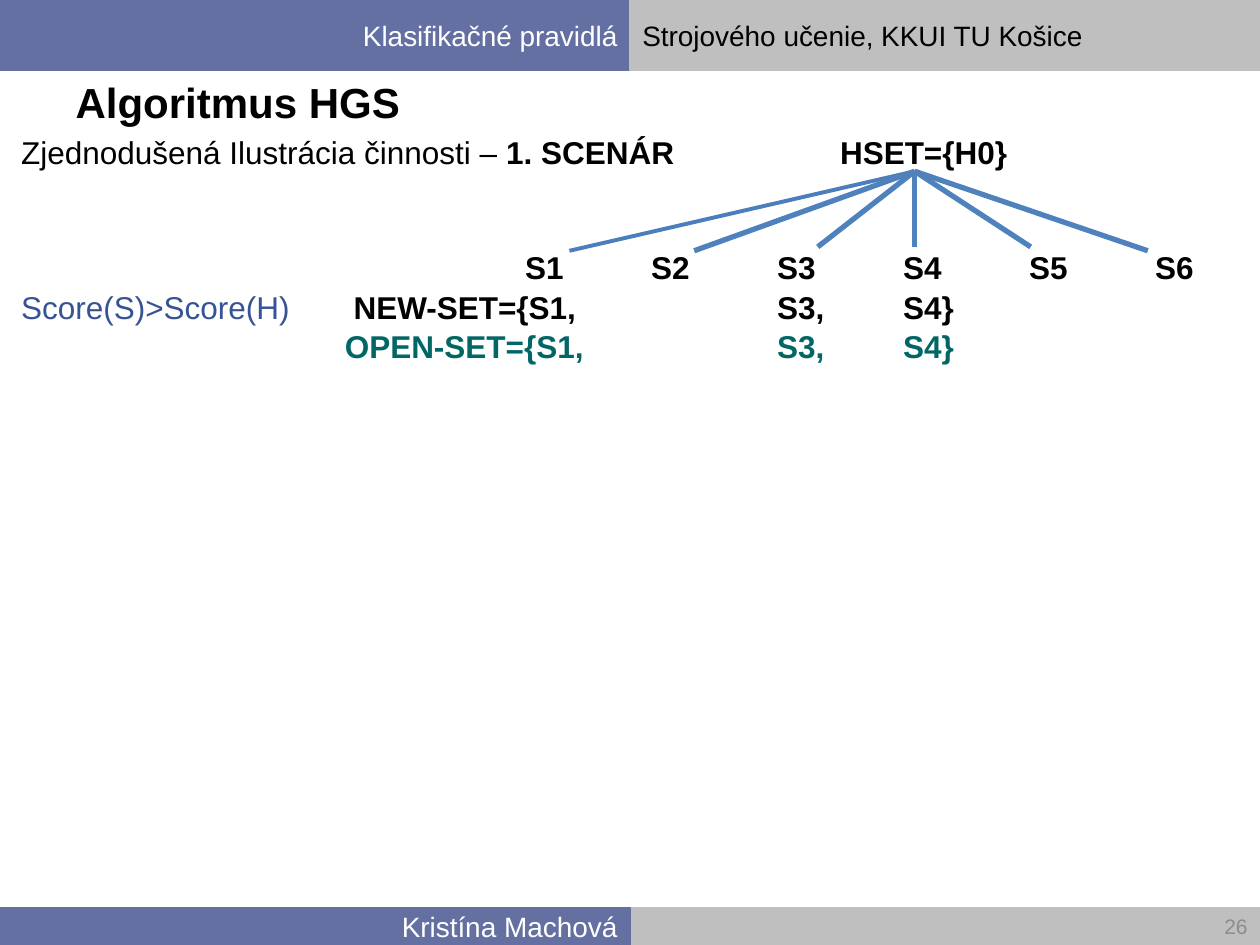
"""Build the slide on the first scenario of the HGS algorithm."""
import pptx
import pptx.dml.color
import pptx.enum.shapes
import pptx.enum.text
import pptx.oxml.ns
import pptx.util
from lxml import etree

Pt = pptx.util.Pt
RGB = pptx.dml.color.RGBColor
ALIGN = pptx.enum.text.PP_ALIGN
ANCHOR = pptx.enum.text.MSO_ANCHOR

BLACK = RGB(0, 0, 0)
WHITE = RGB(255, 255, 255)
GREY = RGB(0xBF, 0xBF, 0xBF)
DIM = RGB(0x8C, 0x8C, 0x8C)
SLATE = RGB(0x65, 0x70, 0xA2)
NAVY = RGB(0x36, 0x53, 0x94)
TEAL = RGB(0, 0x66, 0x66)
BLUE = RGB(0x4F, 0x81, 0xBD)
STEEL = RGB(0x4B, 0x7E, 0xBC)

WIDTH, HEIGHT = 720, 540
HALF, TOP, FOOT = WIDTH / 2, 40.32, 21.6
STEP = 72
COLS = [288 + STEP * i for i in range(6)]

BANDS = [
    (HALF, HEIGHT - FOOT, FOOT, GREY, "", BLACK, ALIGN.LEFT),
    (0, 0, TOP, SLATE, "Klasifikačné pravidlá", WHITE, ALIGN.RIGHT),
    (HALF, 0, TOP, GREY, "Strojového učenie, KKUI TU Košice", BLACK, ALIGN.LEFT),
    (0, HEIGHT - FOOT, FOOT, SLATE, "Kristína Machová", WHITE, ALIGN.RIGHT),
]

ROWS = [
    (0, [468], [("Zjednodušená Ilustrácia činnosti – ", BLACK, False),
                ("1. SCENÁR\tHSET={H0}", BLACK, True)]),
    (44, COLS, [("\tS1\tS2\tS3\tS4\tS5\tS6", BLACK, True)]),
    (0.9, [190, *COLS[2:4]], [("Score(S)>Score(H)", NAVY, False),
                              ("\tNEW-SET={S1,\tS3,\tS4}", BLACK, True)]),
    (0.9, [185, *COLS[2:4]], [("\tOPEN-SET={S1,\tS3,\tS4}", TEAL, True)]),
]

ROOT = (522.7, 97.9)
ENDS = [
    (325.4, 143.3, STEEL, 2.25),
    (396.7, 143.3, BLUE, 3),
    (467.3, 141.1, BLUE, 3),
    (522.7, 141.1, BLUE, 3),
    (589, 141.1, BLUE, 3),
    (655.9, 143.3, BLUE, 3),
]


def write(para, text, size=18, color=BLACK, bold=False, align=ALIGN.LEFT):
    para.alignment = align
    run = para.add_run()
    run.text = text
    font = run.font
    font.name, font.size, font.bold = "Arial", Pt(size), bold
    font.color.rgb = color


def place(shape, *box):
    shape.left, shape.top, shape.width, shape.height = map(Pt, box)


def set_tabs(para, stops):
    qn = pptx.oxml.ns.qn
    tabs = etree.SubElement(para._p.get_or_add_pPr(), qn("a:tabLst"))
    for stop in stops:
        etree.SubElement(tabs, qn("a:tab"), pos=str(int(Pt(stop))), algn="l")


def add_band(slide, left, top, high, fill, text, color, align):
    band = slide.shapes.add_shape(pptx.enum.shapes.MSO_SHAPE.RECTANGLE,
                                  Pt(left), Pt(top), Pt(HALF), Pt(high))
    band.shadow.inherit = False
    band.fill.solid()
    band.fill.fore_color.rgb = fill
    band.line.color.rgb = fill
    band.line.width = Pt(0.75)
    if text:
        band.text_frame.vertical_anchor = ANCHOR.MIDDLE
        write(band.text_frame.paragraphs[0], text, size=16, color=color, align=align)


def add_box(slide, *box):
    frame = slide.shapes.add_textbox(*map(Pt, box)).text_frame
    frame.word_wrap = True
    return frame


def add_edge(slide, left, top, color, width):
    edge = slide.shapes.add_connector(pptx.enum.shapes.MSO_CONNECTOR.STRAIGHT,
                                      *map(Pt, (*ROOT, left, top)))
    edge.line.color.rgb = color
    edge.line.width = Pt(width)
    etree.SubElement(edge._element.spPr, pptx.oxml.ns.qn("a:effectLst"))


def main():
    deck = pptx.Presentation()
    deck.slide_width, deck.slide_height = Pt(WIDTH), Pt(HEIGHT)
    slide = deck.slides.add_slide(deck.slide_layouts[5])

    for band in BANDS:
        add_band(slide, *band)

    title = slide.shapes.title
    place(title, 36, TOP, 648, 36)
    title.text_frame.vertical_anchor = ANCHOR.MIDDLE
    write(title.text_frame.paragraphs[0], "Algoritmus HGS", size=24, bold=True)

    page = add_box(slide, 473.76, HEIGHT - FOOT, 246.24, FOOT)
    page.vertical_anchor = ANCHOR.MIDDLE
    write(page.paragraphs[0], "26", size=12, color=DIM, align=ALIGN.RIGHT)

    body = add_box(slide, 5, 72.7, 710.6, 159.8)
    for i, (gap, stops, runs) in enumerate(ROWS):
        para = body.add_paragraph() if i else body.paragraphs[0]
        para.space_before = Pt(gap)
        set_tabs(para, stops)
        for text, color, bold in runs:
            write(para, text, color=color, bold=bold)

    for end in ENDS:
        add_edge(slide, *end)

    deck.save("out.pptx")


if __name__ == "__main__":
    main()
